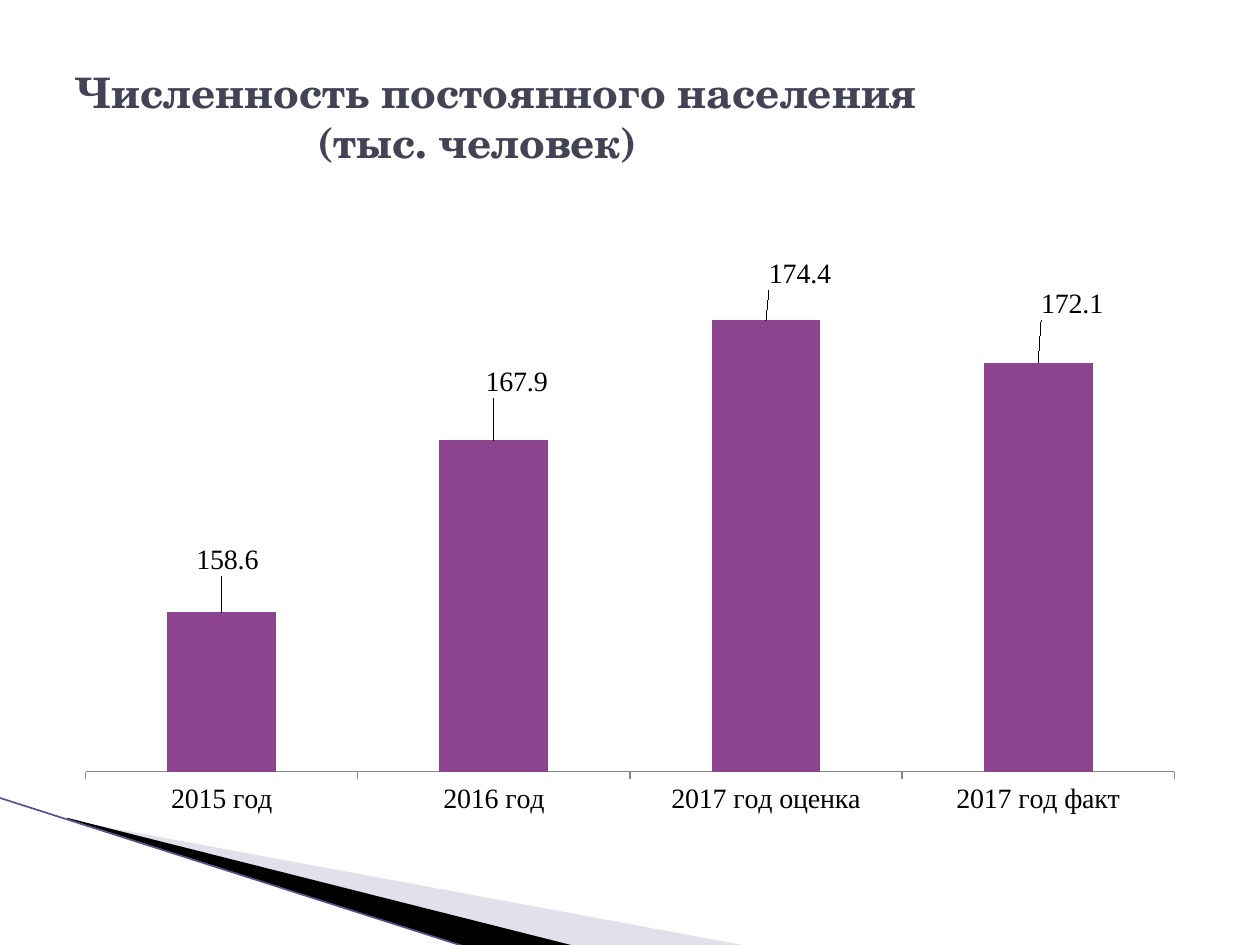
from lxml import etree
from pptx import Presentation
from pptx.chart.data import CategoryChartData
from pptx.dml.color import RGBColor
from pptx.enum.chart import XL_CHART_TYPE, XL_LABEL_POSITION, XL_TICK_MARK
from pptx.enum.shapes import MSO_CONNECTOR
from pptx.enum.text import MSO_ANCHOR, PP_ALIGN
from pptx.oxml import parse_xml
from pptx.oxml.ns import nsdecls, qn
from pptx.util import Inches, Pt

COLUMN = XL_CHART_TYPE.COLUMN_CLUSTERED
OUTSIDE_END = XL_LABEL_POSITION.OUTSIDE_END
TICK_OUT = XL_TICK_MARK.OUTSIDE
TICK_NONE = XL_TICK_MARK.NONE
STRAIGHT = MSO_CONNECTOR.STRAIGHT
MIDDLE = MSO_ANCHOR.MIDDLE
LEFT = PP_ALIGN.LEFT

TITLE_FONT = "TeX Gyre Schola"
CHART_FONT = "Times New Roman"
NUMBER_FORMAT = "#,##0.0"
POPULATION = {
    "2015 год": 158.6,
    "2016 год": 167.9,
    "2017 год оценка": 174.4,
    "2017 год факт": 172.1,
}
LABEL_SHIFTS = [(0.005, -0.05), (0.02, -0.06), (0.03, -0.04), (0.03, -0.06)]


def rgb(value):
    """Return the colour for a hex string."""
    return RGBColor.from_string(value)


def set_font(font, name, size, color, bold=False):
    """Set face, size, colour and weight of a font."""
    font.name, font.size, font.bold = name, Pt(size), bold
    font.color.rgb = rgb(color)


def layout_xml(**values):
    """Return a manual chart layout holding the given values."""
    items = "".join(f'<c:{k} val="{v}"/>' for k, v in values.items())
    return parse_xml(
        f'<c:layout {nsdecls("c")}><c:manualLayout>{items}</c:manualLayout></c:layout>'
    )


def add_title(s, lines):
    """Fill the title placeholder with (text, left indent) lines."""
    sp = s.shapes.title
    sp.left, sp.top, sp.width, sp.height = map(Inches, (0.5, 0.3, 9, 1.25))
    tf = sp.text_frame
    tf.word_wrap = True
    tf.vertical_anchor = MIDDLE
    tf.text = "\n".join(text for text, _ in lines)
    for p, (_, indent) in zip(tf.paragraphs, lines):
        p.alignment = LEFT
        p._p.get_or_add_pPr().set("marL", str(Inches(indent)))
        set_font(p.font, TITLE_FONT, 24, "424456", True)


def add_wedge(s, points, color, opacity=100):
    """Add a closed filled outline through points in inches."""
    start, *rest = [(Inches(x), Inches(y)) for x, y in points]
    builder = s.shapes.build_freeform(*start)
    builder.add_line_segments(rest)
    sp = builder.convert_to_shape()
    sp.shadow.inherit = False
    sp.fill.solid()
    sp.fill.fore_color.rgb = rgb(color)
    sp.line.fill.background()
    if opacity < 100:
        clr = sp._element.spPr.find(".//" + qn("a:srgbClr"))
        etree.SubElement(clr, qn("a:alpha")).set("val", str(opacity * 1000))


def add_line(s, start, end, color, width):
    """Add a straight line without shadow."""
    line = s.shapes.add_connector(STRAIGHT, *map(Inches, start + end))
    line.line.color.rgb = rgb(color)
    line.line.width = Pt(width)
    etree.SubElement(line._element.spPr, qn("a:effectLst"))


def style_axes(chart):
    """Show the category axis and hide the value axis."""
    axis = chart.category_axis
    axis.major_tick_mark = TICK_OUT
    axis.minor_tick_mark = TICK_NONE
    axis.has_major_gridlines = False
    axis.format.line.color.rgb = rgb("878787")
    set_font(axis.tick_labels.font, CHART_FONT, 16, "000000")
    axis = chart.value_axis
    axis.minimum_scale, axis.maximum_scale = 150, 180
    axis.has_major_gridlines = False
    axis.tick_labels.number_format = NUMBER_FORMAT
    axis.tick_labels.number_format_is_linked = False
    axis.visible = False


def style_labels(series):
    """Show value labels moved away from the bars."""
    labels = series.data_labels
    labels.show_value = True
    labels.number_format = NUMBER_FORMAT
    labels.number_format_is_linked = False
    labels.position = OUTSIDE_END
    set_font(labels.font, CHART_FONT, 16, "000000")
    for i, _ in enumerate(LABEL_SHIFTS):
        label = series.points[i].data_label
        set_font(label.font, CHART_FONT, 16, "000000")
        label.position = OUTSIDE_END
    for item, (x, y) in zip(series._element.findall(".//" + qn("c:dLbl")), LABEL_SHIFTS):
        item.find(qn("c:idx")).addnext(layout_xml(x=x, y=y))


def add_population_chart(s):
    """Add the column chart of population by year."""
    data = CategoryChartData(number_format=NUMBER_FORMAT)
    data.categories = list(POPULATION)
    data.add_series("Series 1", list(POPULATION.values()))
    box = map(Inches, (0.5, 1.62, 9, 4.95))
    chart = s.shapes.add_chart(COLUMN, *box, data).chart
    chart.has_legend = False
    chart.has_title = False
    set_font(chart.font, "Noto Sans Mono", 18, "000000")
    plot = chart.plots[0]
    plot.gap_width = 150
    plot.vary_by_categories = False
    series = plot.series[0]
    series.format.fill.solid()
    series.format.fill.fore_color.rgb = rgb("8D448E")
    style_axes(chart)
    style_labels(series)
    area = chart._chartSpace.find(".//" + qn("c:plotArea"))
    for old in area.findall(qn("c:layout")):
        area.remove(old)
    area.insert(0, layout_xml(layoutTarget="inner", xMode="edge", yMode="edge",
                              x=0.02, y=0.02, w=0.96, h=0.89))


def main():
    """Build and save the slide."""
    prs = Presentation()
    prs.slide_width, prs.slide_height = Inches(10), Inches(7.5)
    s = prs.slides.add_slide(prs.slide_layouts[5])
    add_wedge(s, [(0.55, 6.51), (5.95, 7.51), (4.56, 7.51), (0.55, 6.5)], "B6B6D1", 40)
    add_wedge(s, [(0.53, 6.49), (4.57, 7.51), (3.72, 7.52), (0.54, 6.5)], "000000")
    add_line(s, (-0.01, 6.33), (3.71, 7.52), "53548A", 0.95)
    add_population_chart(s)
    add_title(s, [("Численность постоянного населения", 0), ("(тыс. человек)", 1.92)])
    prs.save("out.pptx")


if __name__ == "__main__":
    main()
